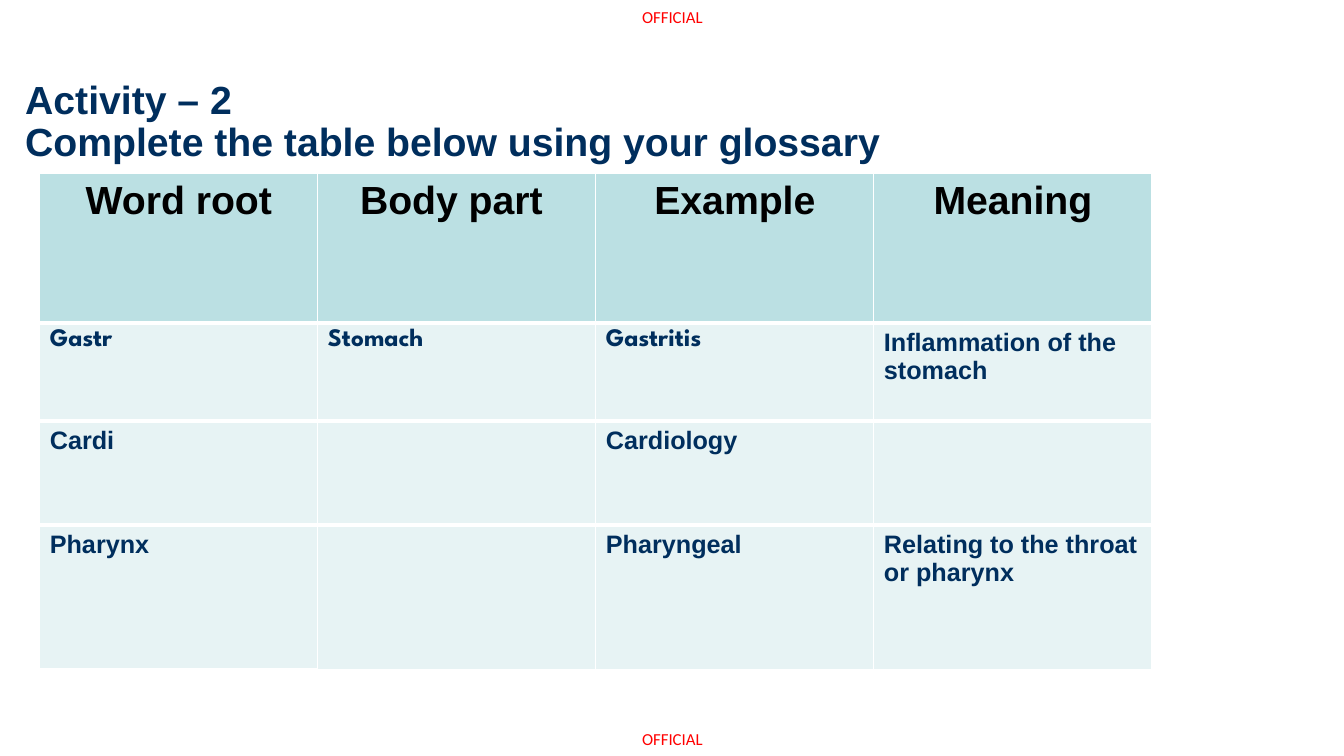
import dataclasses

import lxml.etree
import pptx
import pptx.dml.color
import pptx.enum.text
import pptx.oxml
import pptx.oxml.ns
import pptx.util

Pt = pptx.util.Pt
COLOURS = {
    "navy": "002E5D",
    "black": "000000",
    "red": "FF0000",
    "header": "BBE0E3",
    "body": "E7F3F4",
    "border": "FFFFFF",
}


@dataclasses.dataclass
class TextStyle:
    size: float
    colour: str
    font: str = "Arial"
    bold: bool = True
    align: pptx.enum.text.PP_ALIGN = pptx.enum.text.PP_ALIGN.LEFT


@dataclasses.dataclass
class TableRow:
    height: float
    texts: tuple[str, ...]


HEADING = TextStyle(28, "navy")
COLUMN_HEAD = TextStyle(28, "black", align=pptx.enum.text.PP_ALIGN.CENTER)
ENTRY = TextStyle(18, "navy")
FIRST_ENTRY = TextStyle(18, "navy", font="League Spartan")
MARKING = TextStyle(12, "red", font="Calibri", bold=False)

MARKING_TOPS = (5, 520.5)
COLUMN_WIDTH = 198.6
ROWS = (
    TableRow(107, ("Word root", "Body part ", "Example", "Meaning")),
    TableRow(70, ("Gastr", "Stomach", "Gastritis", "Inflammation of the stomach")),
    TableRow(74.2, ("Cardi", "", "Cardiology", "")),
    TableRow(103, ("Pharynx", "", "Pharyngeal", "Relating to the throat or pharynx")),
)


def rgb(name: str) -> pptx.dml.color.RGBColor:
    return pptx.dml.color.RGBColor.from_string(COLOURS[name])


def write(frame, text: str, style: TextStyle):
    """Fill a text frame with one styled paragraph."""
    para = frame.paragraphs[0]
    para.text = text
    para.alignment = style.align
    para.font.name = style.font
    para.font.size = Pt(style.size)
    para.font.bold = style.bold
    para.font.color.rgb = rgb(style.colour)
    return para


def clear_margins(frame) -> None:
    frame.margin_left = frame.margin_right = Pt(0)
    frame.margin_top = frame.margin_bottom = Pt(0)


def add_marking(page, top: float) -> None:
    box = page.shapes.add_textbox(Pt(458.6), Pt(top), Pt(46), Pt(14.5))
    clear_margins(box.text_frame)
    box.text_frame.word_wrap = False
    write(box.text_frame, "OFFICIAL", MARKING)


def set_borders(cell, top: float, bottom: float) -> None:
    properties = cell._tc.get_or_add_tcPr()
    for side, width in (("L", 1), ("R", 1), ("T", top), ("B", bottom)):
        line = lxml.etree.SubElement(
            properties, pptx.oxml.ns.qn(f"a:ln{side}"), w=str(Pt(width))
        )
        fill = lxml.etree.SubElement(line, pptx.oxml.ns.qn("a:solidFill"))
        lxml.etree.SubElement(
            fill, pptx.oxml.ns.qn("a:srgbClr"), val=COLOURS["border"]
        )


def add_glossary_table(page) -> None:
    column_count = len(ROWS[0].texts)
    table = page.shapes.add_table(
        len(ROWS), column_count, Pt(28.4), Pt(124),
        Pt(COLUMN_WIDTH * column_count), Pt(sum(row.height for row in ROWS)),
    ).table
    table.horz_banding = False
    for column in table.columns:
        column.width = Pt(COLUMN_WIDTH)

    last_row = len(ROWS) - 1
    for row_index, row in enumerate(ROWS):
        table.rows[row_index].height = Pt(row.height)
        for column_index, text in enumerate(row.texts):
            cell = table.cell(row_index, column_index)
            # Inner rules are thick; the outer edge is thin except bottom left
            thin_bottom = row_index == last_row and column_index > 0
            set_borders(cell, 1 if row_index == 0 else 3, 1 if thin_bottom else 3)
            cell.fill.solid()
            cell.fill.fore_color.rgb = rgb("header" if row_index == 0 else "body")
            if row_index == 0:
                style = COLUMN_HEAD
            elif row_index == 1 and column_index < column_count - 1:
                style = FIRST_ENTRY
            else:
                style = ENTRY
            write(cell.text_frame, text, style)


def main() -> None:
    deck = pptx.Presentation()
    deck.slide_width, deck.slide_height = Pt(960), Pt(540)
    page = deck.slides.add_slide(deck.slide_layouts[5])

    # Classification markings
    for top in MARKING_TOPS:
        add_marking(page, top)

    # Title
    title = page.shapes.title
    title.left, title.top, title.width, title.height = Pt(18), Pt(57.6), Pt(623.5), Pt(66)
    frame = title.text_frame
    clear_margins(frame)
    frame.word_wrap = True
    frame.auto_size = pptx.enum.text.MSO_AUTO_SIZE.NONE
    frame.vertical_anchor = pptx.enum.text.MSO_ANCHOR.TOP
    para = write(frame, "Activity – 2\vComplete the table below using your glossary", HEADING)
    para.line_spacing = 0.9

    # Table of word roots
    add_glossary_table(page)

    deck.save("out.pptx")


if __name__ == "__main__":
    main()
